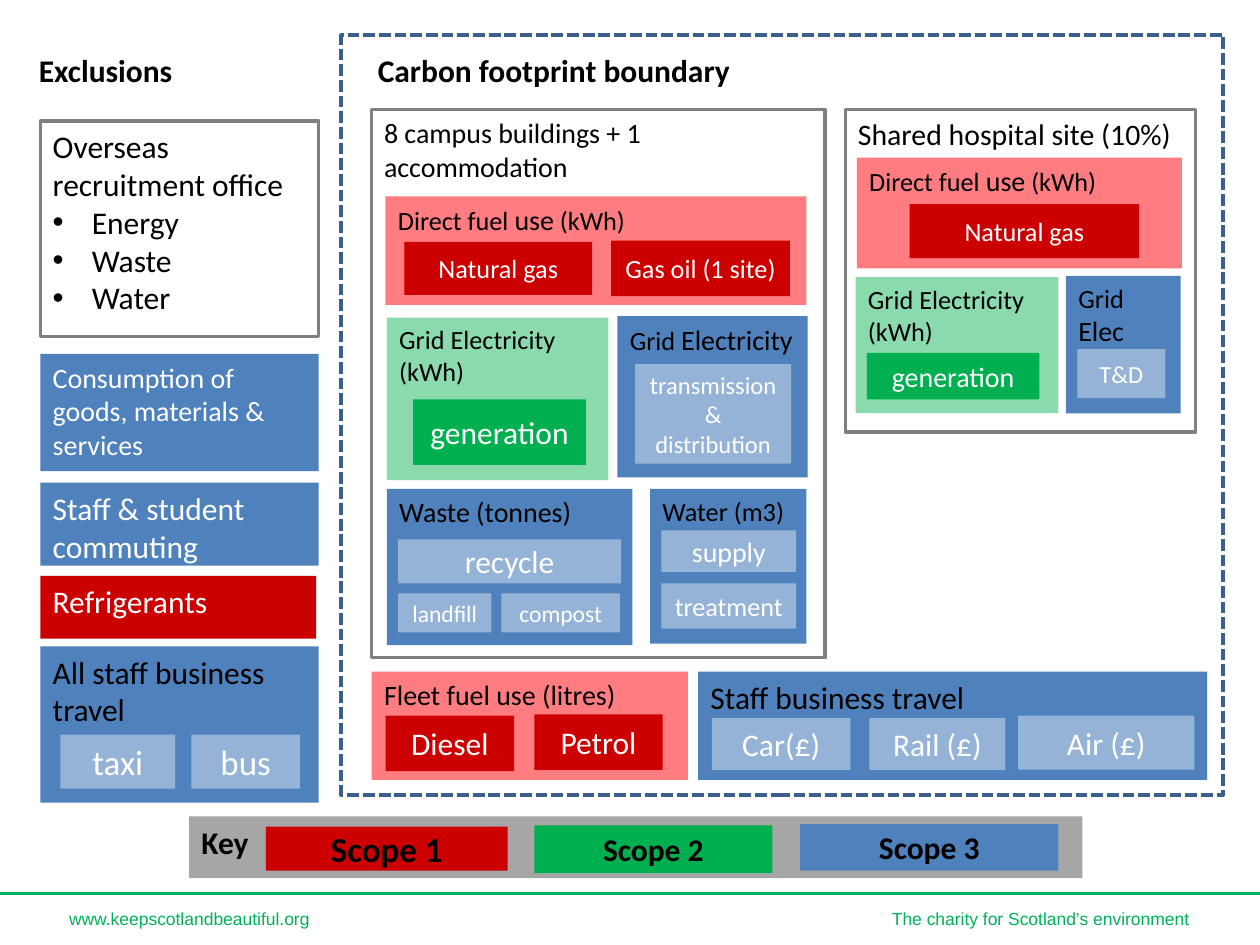
from dataclasses import dataclass
from typing import Optional

from lxml import etree
from pptx import Presentation
from pptx import util as u
from pptx.dml.color import RGBColor
from pptx.enum import dml, shapes, text
from pptx.oxml.ns import qn


@dataclass(frozen=True)
class Theme:
    black: str = "000000"
    white: str = "FFFFFF"
    grey: str = "808080"
    ash: str = "A6A6A6"
    navy: str = "3A5F8C"
    red: str = "CC0000"
    pink: str = "FF7C80"
    green: str = "00B050"
    brand: str = "00B259"
    blue: str = "4F81BD"
    sky: str = "95B3D7"
    body: str = "Calibri"
    foot: str = "Arial"
    tiny: float = 10
    note: float = 13.5
    small: float = 14
    mid: float = 15
    text: float = 16
    wide: float = 17
    head: float = 18
    big: float = 20


T = Theme()
Runs = tuple[tuple[str, float], ...]
Spot = tuple[float, float, float, float]  # left, top, width, height


@dataclass(frozen=True)
class Box:
    spot: Spot
    runs: Runs
    fill: Optional[str] = None  # None gives a grey outline
    ink: str = T.black
    bold: bool = False
    mid: bool = False
    alpha: Optional[int] = None
    list: tuple[str, ...] = ()


def panel(spot: Spot, words: str, size: float, fill: Optional[str] = None, **more) -> Box:
    return Box(spot, ((words, size),), fill, **more)


def chip(spot: Spot, words: str, size: float, fill: str = T.sky) -> Box:
    return Box(spot, ((words, size),), fill, T.white, mid=True)


def scope(spot: Spot, words: str, size: float, fill: str) -> Box:
    return Box(spot, ((words, size),), fill, bold=True, mid=True)


def fuel(spot: Spot) -> Box:
    return Box(spot, (("Direct fuel ", T.mid), ("use", T.text), (" (kWh)", T.mid)), T.pink)


def power(spot: Spot) -> Box:
    return panel(spot, "Grid Electricity (kWh)", T.mid, T.green, alpha=46)


def grid(spot: Spot, word: str) -> Box:
    return Box(spot, (("Grid ", T.mid), (word, T.text)), T.blue)


def place(spot: Spot) -> list[u.Length]:
    return [u.Inches(n) for n in spot]


def style(font, size: float, ink: str, bold: bool = False, face: str = T.body) -> None:
    for key, val in {"name": face, "size": u.Pt(size), "bold": bold}.items():
        setattr(font, key, val)
    font.color.rgb = RGBColor.from_string(ink)


def edge(line, ink: str, width: float) -> None:
    line.color.rgb = RGBColor.from_string(ink)
    line.width = u.Pt(width)


def bullet(para) -> None:
    props = para._p.get_or_add_pPr()
    for key, val in {"marL": u.Inches(0.31), "indent": u.Inches(-0.31)}.items():
        props.set(key, str(int(val)))
    etree.SubElement(props, qn("a:buFont"), typeface=T.foot)
    etree.SubElement(props, qn("a:buChar"), char="•")


def draw(tree, box: Box) -> None:
    shape = tree.add_shape(shapes.MSO_SHAPE.RECTANGLE, *place(box.spot))
    shape.shadow.inherit = False
    if box.fill:
        shape.fill.solid()
        shape.fill.fore_color.rgb = RGBColor.from_string(box.fill)
        shape.line.fill.background()
    else:
        shape.fill.background()
        edge(shape.line, T.grey, 2)
    if box.alpha:
        tint = shape.fill._xPr.find(qn("a:solidFill"))[0]
        etree.SubElement(tint, qn("a:alpha"), val=str(box.alpha * 1000))
    frame = shape.text_frame
    anchor = text.MSO_ANCHOR
    frame.vertical_anchor = anchor.MIDDLE if box.mid else anchor.TOP
    frame.word_wrap = True
    para = frame.paragraphs[0]
    align = text.PP_ALIGN.CENTER if box.mid else text.PP_ALIGN.LEFT
    para.alignment = align
    for words, size in box.runs:
        run = para.add_run()
        run.text = words
        style(run.font, size, box.ink, box.bold)
    for item in box.list:
        para = frame.add_paragraph()
        para.alignment = align
        bullet(para)
        run = para.add_run()
        run.text = item
        style(run.font, box.runs[0][1], box.ink)


def label(tree, spot: Spot, words: str, wrap: bool = True, **look) -> None:
    frame = tree.add_textbox(*place(spot)).text_frame
    frame.word_wrap = wrap
    frame.auto_size = text.MSO_AUTO_SIZE.SHAPE_TO_FIT_TEXT
    run = frame.paragraphs[0].add_run()
    run.text = words
    style(run.font, **look)


# Each inner list is one group: a panel, then the chips on it
SITES = [
    [panel((2.95, 0.87, 3.6, 4.35), "8 campus buildings + 1 accommodation", T.text)],
    [fuel((3.06, 1.56, 3.34, 0.86)),
     chip((3.21, 1.92, 1.49, 0.42), "Natural gas", T.mid, T.red),
     chip((4.85, 1.91, 1.42, 0.44), "Gas oil (1 site)", T.mid, T.red)],
    [power((3.07, 2.52, 1.76, 1.29)),
     chip((3.28, 3.17, 1.37, 0.52), "generation", T.head, T.green)],
    [grid((4.9, 2.51, 1.51, 1.28), "Electricity"),
     chip((5.04, 2.89, 1.24, 0.79), "transmission & distribution", T.small)],
    [panel((3.07, 3.88, 1.95, 1.24), "Waste (tonnes)", T.text, T.blue),
     chip((3.16, 4.28, 1.77, 0.35), "recycle", T.head),
     chip((3.16, 4.71, 0.74, 0.31), "landfill", T.note),
     chip((3.98, 4.71, 0.94, 0.31), "compost", T.note)],
    [panel((5.16, 3.88, 1.24, 1.23), "Water (m3)", T.mid, T.blue),
     chip((5.25, 4.21, 1.07, 0.33), "supply", T.text),
     chip((5.25, 4.63, 1.07, 0.36), "treatment", T.mid)],
    [panel((6.71, 0.87, 2.78, 2.56), "Shared hospital site (10%)", T.wide),
     fuel((6.8, 1.25, 2.58, 0.88)),
     chip((7.22, 1.62, 1.82, 0.43), "Natural gas", T.mid, T.red),
     power((6.79, 2.2, 1.61, 1.08)),
     chip((6.88, 2.8, 1.37, 0.37), "generation", T.text, T.green),
     grid((8.46, 2.19, 0.91, 1.09), "Elec"),
     chip((8.55, 2.77, 0.7, 0.39), "T&D", T.small)],
]
TRAVEL = [
    [panel((2.95, 5.33, 2.51, 0.86), "Fleet fuel use (litres)", T.text, T.pink),
     chip((3.06, 5.68, 1.02, 0.44), "Diesel", T.head, T.red),
     chip((4.24, 5.67, 1.02, 0.44), "Petrol", T.head, T.red)],
    [panel((5.54, 5.33, 4.04, 0.86), "Staff business travel", T.head, T.blue),
     chip((5.65, 5.7, 1.1, 0.41), "Car(£)", T.head),
     chip((6.9, 5.7, 1.08, 0.41), "Rail (£)", T.head),
     chip((8.08, 5.68, 1.4, 0.43), "Air (£)", T.head)],
]
OUT = [
    [panel((0.32, 0.96, 2.21, 1.71), "Overseas recruitment office", T.head,
           list=("Energy", "Waste", "Water"))],
    [panel((0.32, 2.81, 2.21, 0.93), "Consumption of goods, materials & services",
           T.text, T.blue, ink=T.white)],
    [panel((0.32, 3.83, 2.21, 0.66), "Staff & student commuting", T.head, T.blue, ink=T.white)],
    [panel((0.32, 4.57, 2.19, 0.5), "Refrigerants", T.head, T.red, ink=T.white)],
    [panel((0.32, 5.13, 2.21, 1.24), "All staff business travel", T.head, T.blue),
     chip((0.48, 5.83, 0.91, 0.43), "taxi", T.big),
     chip((1.52, 5.83, 0.86, 0.43), "bus", T.big)],
]
KEY = [
    [panel((1.5, 6.48, 7.09, 0.49), "Key", T.head, T.ash, bold=True),
     scope((2.11, 6.56, 1.92, 0.35), "Scope 1", T.big, T.red),
     scope((4.24, 6.55, 1.89, 0.38), "Scope 2", T.head, T.green),
     scope((6.35, 6.54, 2.05, 0.37), "Scope 3", T.head, T.blue)],
]


def main() -> None:
    deck = Presentation()
    deck.slide_width, deck.slide_height = u.Inches(10), u.Inches(7.5)
    tree = deck.slides.add_slide(deck.slide_layouts[6]).shapes

    # Footer
    rule = tree.add_connector(shapes.MSO_CONNECTOR.STRAIGHT, *place((0, 7.09, 10, 7.09)))
    edge(rule.line, T.brand, 2)
    etree.SubElement(rule._element.spPr, qn("a:effectLst"))
    for left, width, words in ((0.45, 2.13, "www.keepscotlandbeautiful.org"),
                               (6.98, 2.58, "The charity for Scotland’s environment")):
        label(tree, (left, 7.16, width, 0.27), words, wrap=False,
              size=T.tiny, ink=T.brand, face=T.foot)

    # Dashed boundary
    bound = tree.add_shape(shapes.MSO_SHAPE.RECTANGLE, *place((2.71, 0.28, 7, 6.03)))
    bound.shadow.inherit = False
    bound.fill.background()
    edge(bound.line, T.navy, 2.25)
    bound.line.dash_style = dml.MSO_LINE.SQUARE_DOT

    # Panels
    for group in SITES + TRAVEL + OUT + KEY:
        home = tree.add_group_shape().shapes if len(group) > 1 else tree
        for box in group:
            draw(home, box)

    # Headings
    for left, width, words in ((2.9, 3.03, "Carbon footprint boundary"),
                               (0.21, 1.34, "Exclusions")):
        label(tree, (left, 0.36, width, 0.4), words, size=T.head, ink=T.black, bold=True)

    deck.save("out.pptx")


if __name__ == "__main__":
    main()
